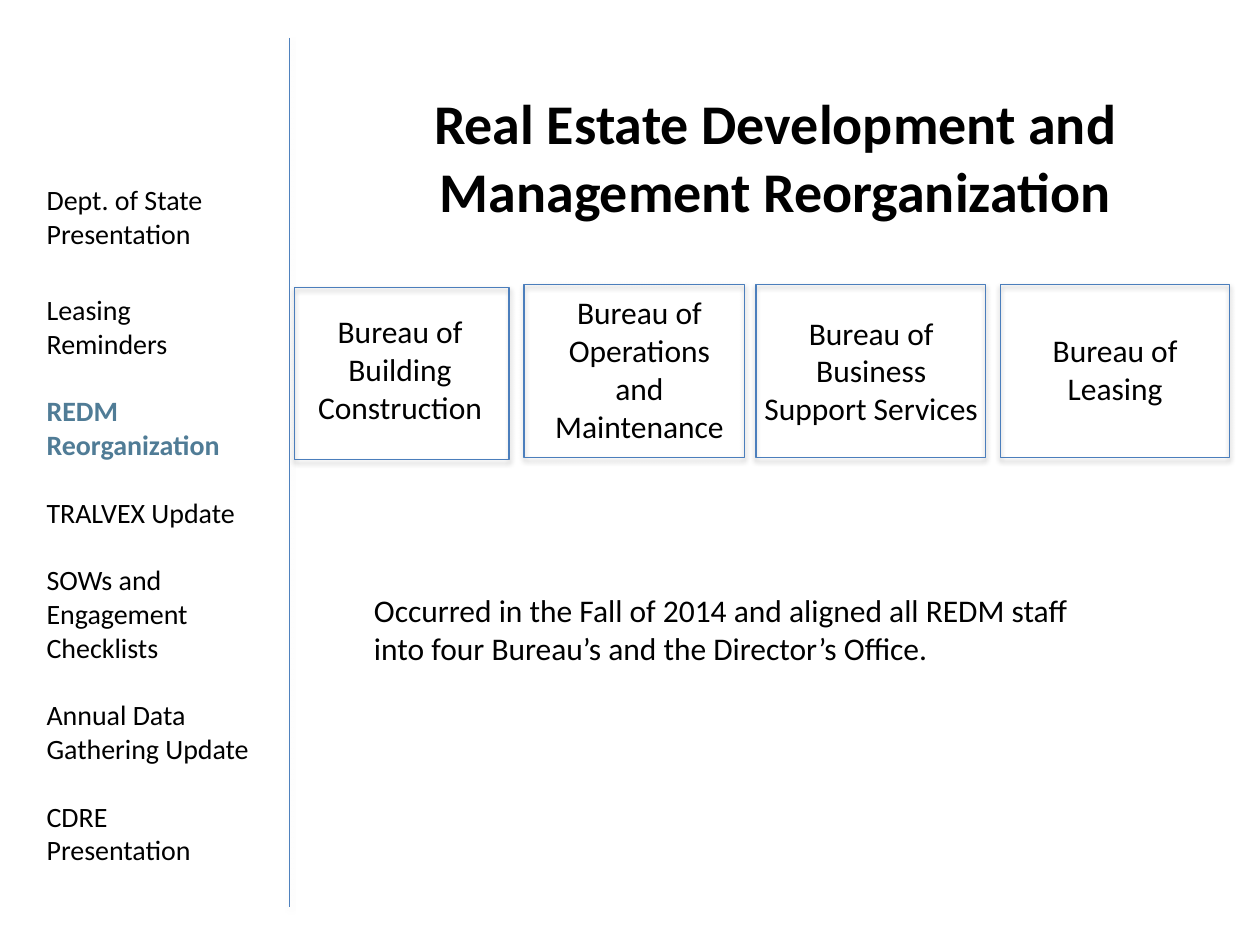
import dataclasses

import lxml.etree
import pptx
import pptx.dml.color
import pptx.enum.shapes
import pptx.enum.text
import pptx.oxml
import pptx.oxml.ns
import pptx.util

EMU_PER_PX = 9144
ALIGN = pptx.enum.text.PP_ALIGN


@dataclasses.dataclass(frozen=True)
class Theme:
    font: str = "Calibri"
    text: str = "000000"
    highlight: str = "507C96"
    divider: str = "4F81BD"
    border: str = "4B7EBC"
    title_size: int = 32
    body_size: int = 18
    agenda_size: int = 16
    line_width: float = 0.75


THEME = Theme()

AGENDA = [
    ("Dept. of State Presentation", 0),
    ("Leasing Reminders", 24.4),
    ("REDM Reorganization", 19.5),
    ("TRALVEX Update", 19.5),
    ("SOWs and Engagement Checklists", 19.5),
    ("Annual Data Gathering Update", 19.5),
    ("CDRE Presentation", 19.5),
]
CURRENT_TOPIC = "REDM Reorganization"

BUREAUS = [
    ("Bureau of Building Construction", (0, 2, 170, 137), (-15, 17, 197, 101)),
    ("Bureau of Operations and Maintenance", (182, 0, 175, 137), (186, 2, 175, 131)),
    ("Bureau of Business Support Services", (366, 0, 182, 137), (361, 18, 193, 101)),
    ("Bureau of Leasing", (560, 0, 182, 137), (560, 32, 182, 71)),
]


def px(*lengths):
    return [pptx.util.Emu(length * EMU_PER_PX) for length in lengths]


def rgb(value):
    return pptx.dml.color.RGBColor.from_string(value)


def style(paragraph, size, color=THEME.text, bold=False, align=ALIGN.LEFT):
    paragraph.alignment = align
    paragraph.font.name = THEME.font
    paragraph.font.size = pptx.util.Pt(size)
    paragraph.font.bold = bold
    paragraph.font.color.rgb = rgb(color)


def outline(part, color, opacity, distance):
    part.line.color.rgb = rgb(color)
    part.line.width = pptx.util.Pt(THEME.line_width)
    properties = part._element.spPr
    for effects in properties.findall(pptx.oxml.ns.qn("a:effectLst")):
        properties.remove(effects)
    properties.append(pptx.oxml.parse_xml(
        f'<a:effectLst {pptx.oxml.ns.nsdecls("a")}>'
        f'<a:outerShdw blurRad="{pptx.util.Pt(3.1)}" dist="{pptx.util.Pt(distance)}" '
        'dir="5400000" rotWithShape="0"><a:srgbClr val="000000">'
        f'<a:alpha val="{opacity * 1000}"/></a:srgbClr></a:outerShdw></a:effectLst>'))


def move(placeholder, box):
    placeholder.left, placeholder.top, placeholder.width, placeholder.height = px(*box)
    placeholder.text_frame.auto_size = pptx.enum.text.MSO_AUTO_SIZE.NONE


def add_text(slide, box, text, align=ALIGN.LEFT):
    frame = slide.shapes.add_textbox(*px(*box)).text_frame
    frame.word_wrap = True
    frame.text = text
    style(frame.paragraphs[0], THEME.body_size, align=align)


def add_divider(slide, box):
    left, top, width, height = box
    divider = slide.shapes.add_connector(
        pptx.enum.shapes.MSO_CONNECTOR.STRAIGHT,
        *px(left, top, left + width, top + height))
    outline(divider, THEME.divider, 38, 1.6)


def add_bureaus(slide, box):
    left, top = box[:2]
    for name, frame, label in BUREAUS:
        bureau = slide.shapes.add_shape(
            pptx.enum.shapes.MSO_SHAPE.RECTANGLE,
            *px(left + frame[0], top + frame[1], *frame[2:]))
        bureau.fill.background()
        outline(bureau, THEME.border, 35, 1.8)
        add_text(slide, (left + label[0], top + label[1], *label[2:]), name, ALIGN.CENTER)


def add_title(slide, box):
    title = slide.shapes.title
    move(title, box)
    title.text_frame.text = "Real Estate Development and Management Reorganization"
    style(title.text_frame.paragraphs[0], THEME.title_size, bold=True, align=ALIGN.CENTER)


def add_agenda(slide, box):
    agenda = slide.placeholders[1]
    move(agenda, box)
    frame = agenda.text_frame
    frame.text = "\n".join(topic for topic, gap in AGENDA)
    for paragraph, (topic, gap) in zip(frame.paragraphs, AGENDA):
        current = topic == CURRENT_TOPIC
        properties = paragraph._p.get_or_add_pPr()
        properties.set("marL", "0")
        properties.set("indent", "0")
        lxml.etree.SubElement(properties, pptx.oxml.ns.qn("a:buNone"))
        paragraph.space_before = pptx.util.Pt(gap)
        style(paragraph, THEME.agenda_size,
              THEME.highlight if current else THEME.text, current)


def main():
    presentation = pptx.Presentation()
    presentation.slide_width, presentation.slide_height = px(1000, 750)
    slide = presentation.slides.add_slide(presentation.slide_layouts[1])
    add_divider(slide, (230, 30, 0, 690))
    add_bureaus(slide, (234, 226, 742, 139))
    add_title(slide, (273, 65, 685, 118))
    add_text(slide, (287, 464, 587, 71),
             "Occurred in the Fall of 2014 and aligned all REDM staff "
             "into four Bureau’s and the Director’s Office.")
    add_agenda(slide, (27, 140, 185, 555))
    presentation.save("out.pptx")


if __name__ == "__main__":
    main()
